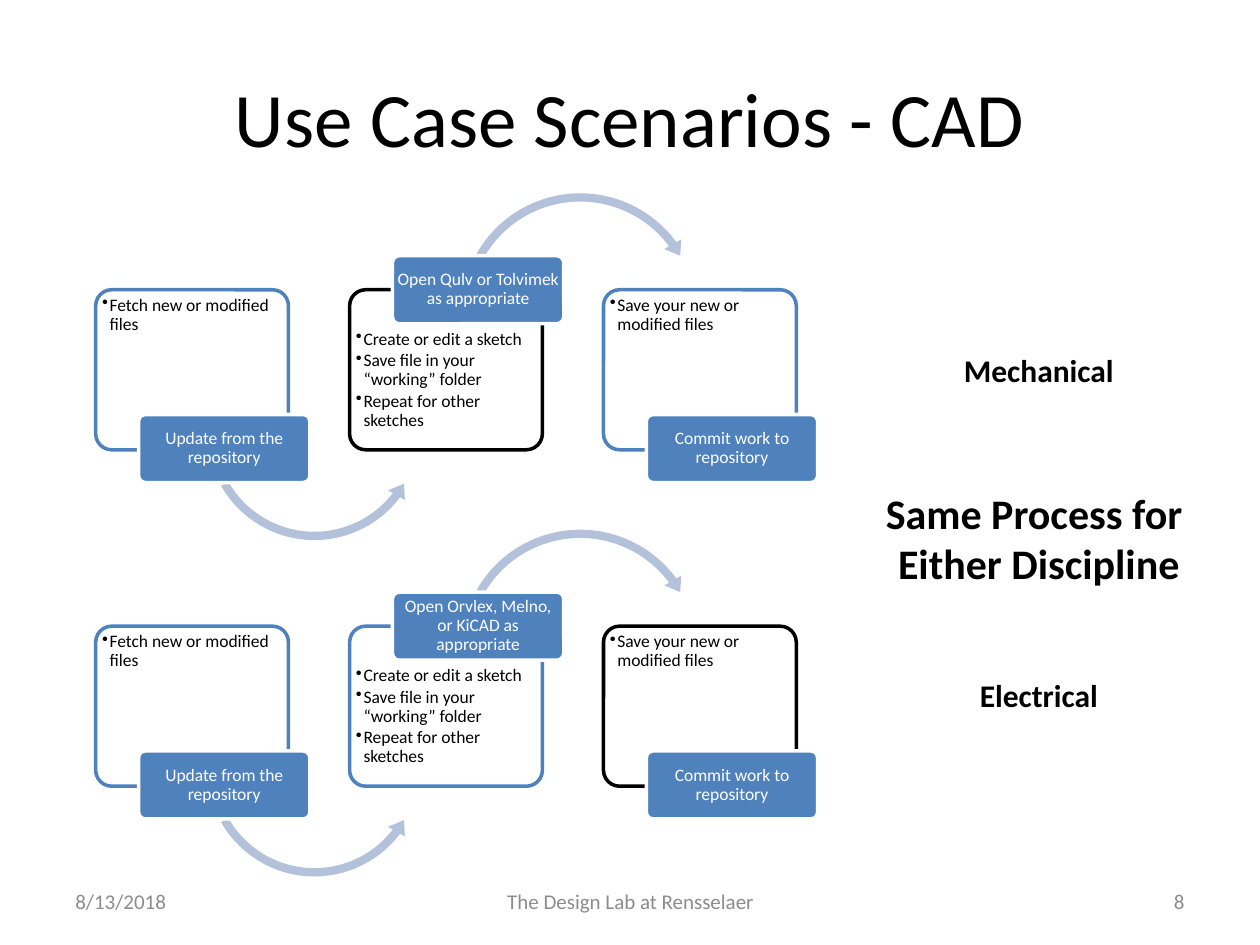
from dataclasses import dataclass
from typing import Optional

from lxml import etree
from pptx import Presentation
from pptx import util as u
from pptx.dml.color import RGBColor
from pptx.enum import shapes, text
from pptx.oxml import ns

BLUE = RGBColor(0x4F, 0x81, 0xBD)
PALE_BLUE = RGBColor(0xB3, 0xC1, 0xDB)
BLACK = RGBColor(0, 0, 0)
WHITE = RGBColor(255, 255, 255)
GRAY = RGBColor(0x8C, 0x8C, 0x8C)
FONT = "Calibri"
LEFT, CENTER, RIGHT = (
    text.PP_ALIGN.LEFT, text.PP_ALIGN.CENTER, text.PP_ALIGN.RIGHT)

# Process layout, in inches
FIRST_X, STEP_PITCH = 0.76, 2.015
CARD_WIDTH, CARD_HEIGHT = 1.53, 1.27
LABEL_WIDTH, LABEL_HEIGHT = 1.36, 0.54


@dataclass(frozen=True)
class Arrow:
    kind: shapes.MSO_SHAPE
    size: float
    dy: float
    adjustments: tuple[float, ...]


@dataclass(frozen=True)
class Step:
    label: str
    bullets: tuple[str, ...]
    label_on_top: bool = False
    arrow: Optional[Arrow] = None


@dataclass(frozen=True)
class Process:
    top: float
    steps: tuple[Step, ...]
    black_card: int


@dataclass(frozen=True)
class Caption:
    lines: tuple[str, ...]
    area: tuple[float, float, float, float]
    size: int
    align: text.PP_ALIGN = CENTER
    color: RGBColor = BLACK
    bold: bool = False
    wrap: bool = True
    middle: bool = True


LOWER_ARROW = Arrow(shapes.MSO_SHAPE.LEFT_CIRCULAR_ARROW, 1.79, 0.24,
                    (0.037, 4.581, 22.336, 90.245, 0.043))
UPPER_ARROW = Arrow(shapes.MSO_SHAPE.CIRCULAR_ARROW, 1.98, -0.81,
                    (0.033, 4.092, 194.153, 125.755, 0.039))


def cad_steps(tools: str) -> tuple[Step, ...]:
    return (
        Step("Update from the repository", ("Fetch new or modified files",),
             arrow=LOWER_ARROW),
        Step(f"Open {tools} as appropriate",
             ("Create or edit a sketch", "Save file in your “working” folder",
              "Repeat for other sketches"),
             label_on_top=True, arrow=UPPER_ARROW),
        Step("Commit work to repository", ("Save your new or modified files",)),
    )


PROCESSES = (
    Process(2.3, cad_steps("Qulv or Tolvimek"), black_card=1),
    Process(4.97, cad_steps("Orvlex, Melno, or KiCAD"), black_card=2),
)
CAPTIONS = (
    Caption(("Use Case Scenarios - CAD",), (0.5, 0.3, 9, 1.25), 44),
    Caption(("8/13/2018",), (0.5, 6.95, 2.33, 0.4), 12, LEFT, GRAY),
    Caption(("The Design Lab at Rensselaer",), (3.42, 6.95, 3.17, 0.4), 12,
            color=GRAY),
    Caption(("8",), (7.17, 6.95, 2.33, 0.4), 12, RIGHT, GRAY),
    Caption(("Mechanical",), (6.92, 2.74, 2.65, 0.4), 18, bold=True,
            middle=False),
    Caption(("Electrical",), (6.92, 5.32, 2.65, 0.4), 18, bold=True,
            middle=False),
    Caption(("Same Process for ", "Either Discipline"),
            (6.92, 3.82, 2.65, 0.91), 24, bold=True, wrap=False, middle=False),
)


def inches(*lengths: float) -> list[u.Length]:
    return [u.Inches(length) for length in lengths]


def write(box, lines: tuple[str, ...], *, size: int, color: RGBColor = BLACK,
          align=LEFT, bold: bool = False, middle: bool = False,
          wrap: bool = True, insets: Optional[tuple[float, float]] = None,
          spacing: Optional[float] = None, after: float = 0,
          bullets: bool = False) -> None:
    """Fill a shape or text box with one paragraph per line."""
    frame = box.text_frame
    frame.word_wrap = wrap
    frame.vertical_anchor = (
        text.MSO_ANCHOR.MIDDLE if middle else text.MSO_ANCHOR.TOP)
    if insets:
        frame.margin_left = frame.margin_right = u.Inches(insets[0])
        frame.margin_top = frame.margin_bottom = u.Inches(insets[1])
    for index, line in enumerate(lines):
        para = frame.add_paragraph() if index else frame.paragraphs[0]
        para.alignment = align
        if spacing:
            para.line_spacing = spacing
            para.space_after = u.Pt(after)
        if bullets:
            props = para._p.get_or_add_pPr()
            props.set("marL", str(u.Inches(0.06)))
            props.set("indent", str(-u.Inches(0.06)))
            etree.SubElement(props, ns.qn("a:buChar")).set("char", "•")
        span = para.add_run()
        span.text = line
        span.font.name, span.font.size = FONT, u.Pt(size)
        span.font.bold, span.font.color.rgb = bold, color


def add_shape(page, kind, area, fill: RGBColor,
              line: Optional[RGBColor] = None, adjustments=(0.1,)):
    shape = page.shapes.add_shape(kind, *inches(*area))
    shape.shadow.inherit = False
    shape.fill.solid()
    shape.fill.fore_color.rgb = fill
    if line is None:
        shape.line.fill.background()
    else:
        shape.line.color.rgb = line
        shape.line.width = u.Pt(2)
    for index, value in enumerate(adjustments):
        shape.adjustments[index] = value
    return shape


def draw_step(page, step: Step, x: float, y: float, outline: RGBColor) -> None:
    rounded = shapes.MSO_SHAPE.ROUNDED_RECTANGLE
    # Card with its bullets
    add_shape(page, rounded, (x, y, CARD_WIDTH, CARD_HEIGHT), WHITE, outline)
    text_y = y + (0.3 if step.label_on_top else 0.03)
    box = page.shapes.add_textbox(*inches(x + 0.03, text_y, 1.48, 0.94))
    write(box, step.bullets, size=10, insets=(0.02, 0.02), spacing=0.9,
          after=1.5, bullets=True)
    # Arrow to the next step
    if step.arrow:
        arrow = step.arrow
        add_shape(page, arrow.kind,
                  (x + 0.84, y + arrow.dy, arrow.size, arrow.size),
                  PALE_BLUE, adjustments=arrow.adjustments)
    # Label over the card edge
    label_y = y + (-0.27 if step.label_on_top else 0.99)
    label = add_shape(page, rounded,
                      (x + 0.34, label_y, LABEL_WIDTH, LABEL_HEIGHT),
                      BLUE, WHITE)
    write(label, (step.label,), size=10, color=WHITE, align=CENTER,
          middle=True, insets=(0.02, 0.01), spacing=0.9)


def draw_process(page, process: Process) -> None:
    for index, step in enumerate(process.steps):
        outline = BLACK if index == process.black_card else BLUE
        draw_step(page, step, FIRST_X + index * STEP_PITCH, process.top, outline)


def draw_caption(page, caption: Caption) -> None:
    box = page.shapes.add_textbox(*inches(*caption.area))
    write(box, caption.lines, size=caption.size, color=caption.color,
          align=caption.align, bold=caption.bold, middle=caption.middle,
          wrap=caption.wrap)


def main() -> None:
    deck = Presentation()
    deck.slide_width, deck.slide_height = inches(10, 7.5)
    page = deck.slides.add_slide(deck.slide_layouts[6])
    for process in PROCESSES:
        draw_process(page, process)
    # Title, footer and side captions
    for caption in CAPTIONS:
        draw_caption(page, caption)
    deck.save("out.pptx")


if __name__ == "__main__":
    main()
